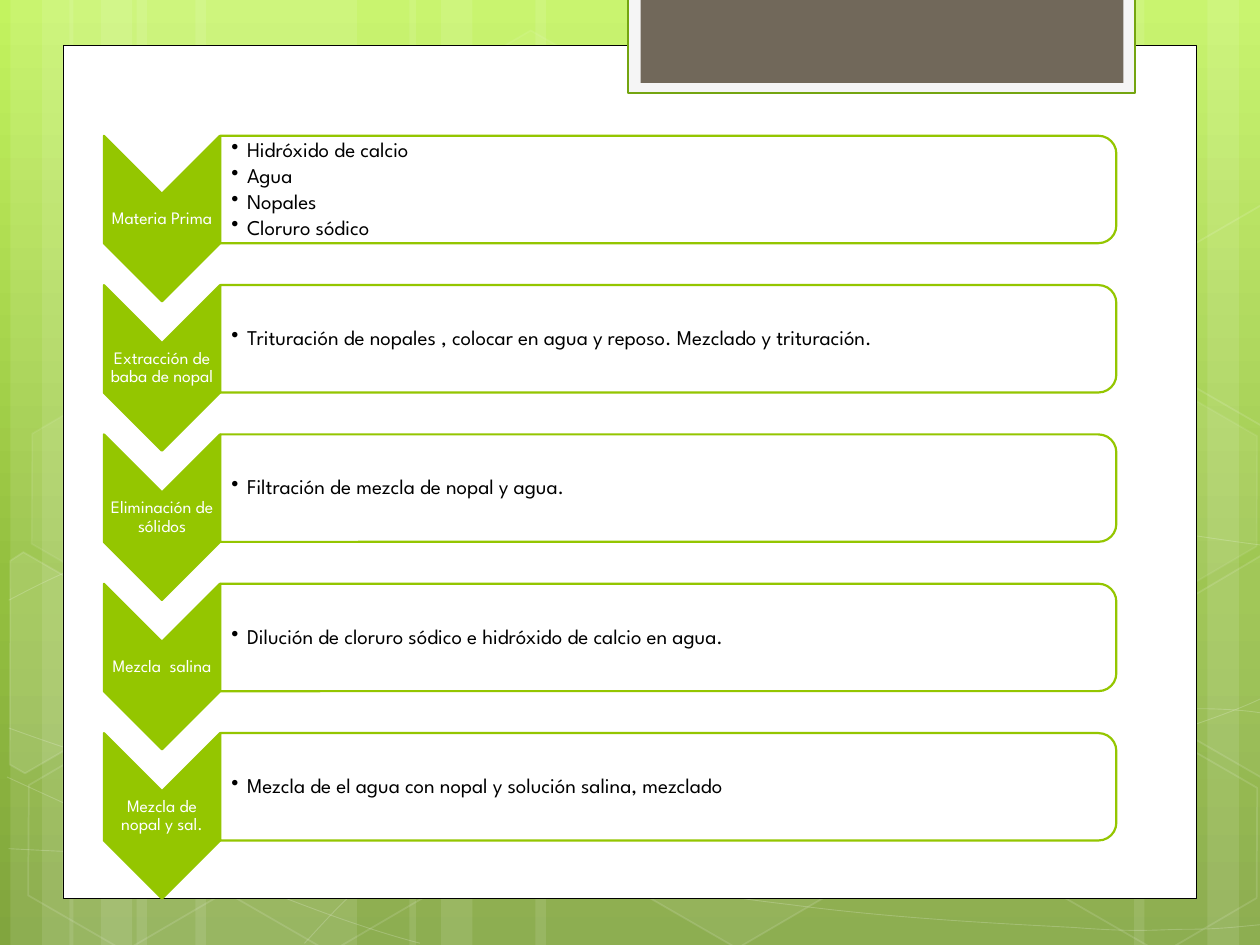
from copy import deepcopy
from dataclasses import dataclass
from math import cos, radians, sin

from lxml.etree import SubElement
from pptx import Presentation
from pptx.dml.color import RGBColor
from pptx.enum.shapes import MSO_SHAPE as Shape
from pptx.enum.text import MSO_ANCHOR as Anchor, PP_ALIGN as Align
from pptx.oxml.ns import qn
from pptx.util import Pt


@dataclass(frozen=True)
class Theme:
    sky: tuple = ((0, "C3F35F"), (0.62, "93BF3F"), (1, "81A53E"))
    white: str = "FFFFFF"
    black: str = "000000"
    green: str = "94C600"
    tab_edge: str = "74A510"
    tab_paper: str = "F5F5F5"
    tab_core: str = "71685A"
    font: str = "League Spartan"
    step_size: float = 10
    detail_size: float = 12


theme = Theme()


def paint(shape, fill=None, line=None, width=1, fill_alpha=100, line_alpha=100):
    """Set fill and outline; alphas are percent opacity, None means no paint."""
    shape.shadow.inherit = False
    shape.line.width = Pt(width)
    for paint_format, color, alpha, parent in (
        (shape.fill, fill, fill_alpha, shape._element.spPr),
        (shape.line.fill, line, line_alpha, shape._element.spPr.find(qn("a:ln"))),
    ):
        if color is None:
            paint_format.background()
            continue
        paint_format.solid()
        paint_format.fore_color.rgb = RGBColor.from_string(color)
        if alpha < 100:
            solid = parent.find(qn("a:solidFill"))
            SubElement(solid[0], qn("a:alpha"), val=str(alpha * 1000))


def write(left, top, width, height, lines, size, color, inset, **paragraph_format):
    box = diagram.add_textbox(Pt(left), Pt(top), Pt(width), Pt(height))
    frame = box.text_frame
    margins = dict(margin_left=inset, margin_top=0.7, margin_right=0.7, margin_bottom=0.7)
    for name, value in margins.items():
        setattr(frame, name, Pt(value))
    frame.word_wrap = True
    frame.vertical_anchor = Anchor.MIDDLE
    frame.text = "\n".join(lines)
    for paragraph in frame.paragraphs:
        for name, value in paragraph_format.items():
            setattr(paragraph, name, value)
        paragraph.line_spacing = 0.9
        for run in paragraph.runs:
            run.font.name = theme.font
            run.font.size = Pt(size)
            run.font.color.rgb = RGBColor.from_string(color)
    return frame


deck = Presentation()
deck.slide_width, deck.slide_height = Pt(720), Pt(540)
slide = deck.slides.add_slide(deck.slide_layouts[6])

# Background gradient
sky = slide.background.fill
sky.gradient()
sky.gradient_angle = 270
stop_list = slide._element.find(".//" + qn("a:gsLst"))
stop_list.append(deepcopy(stop_list[-1]))
for stop, (position, color) in zip(sky.gradient_stops, theme.sky):
    stop.position = position
    stop.color.rgb = RGBColor.from_string(color)

# Light vertical bands
scenery = slide.shapes.add_group_shape().shapes
bands = [(78, 126), (6, 36), (24, 60), (111.6, 126), (39.6, 36), (57.6, 60),
         (528, 126), (690, 36), (648, 60), (306, 222), (234, 36), (252, 60)]
for left, width in bands:
    band = scenery.add_shape(Shape.RECTANGLE, Pt(left), 0, Pt(width), Pt(540))
    paint(band, theme.white, fill_alpha=10)

# Wavy lines: a start, then two handles and an end for each Bézier piece
waves = [
    [(5, 484.6), (43.9, 486.7), (82.8, 488.9), (136.8, 488.2), (190.8, 487.4), (257.8, 486),
     (329.8, 478.8), (401.8, 471.6), (504, 457.9), (570.2, 444.2), (635.8, 430.6),
     (703.4, 409), (725, 396.7)],
    [(5, 343.4), (25.9, 331.9), (46.8, 321.1), (87.1, 310.3), (128.2, 299.5), (186.5, 283.7),
     (249.8, 278.6), (313.9, 273.6), (391.7, 272.9), (470.9, 278.6), (550.1, 284.4),
     (681.8, 306.7), (725, 312.5)],
    [(4.3, 444.2), (91.4, 483.8), (177.8, 523.4), (240.5, 539.3)],
    [(5, 416.2), (27.4, 424.1), (50.4, 432), (92.2, 443.5), (133.9, 454.3), (196.6, 472.3),
     (257, 484.6), (316.8, 496.8), (392.4, 509.8), (452.2, 517), (511.9, 524.9), (576, 527.8),
     (614.2, 529.9), (651.6, 532.8), (661.7, 531.4), (680.4, 531.4), (699.1, 530.6),
     (712.1, 529.2), (725, 528.5)],
    [(174.2, 539.3), (187.2, 524.9), (200.2, 510.5), (217.4, 497.5), (234.7, 484.6),
     (259.2, 470.2), (279.4, 460.1), (299.5, 450), (311.8, 445.7), (338.4, 438.5),
     (364.3, 431.3), (412.6, 421.2), (437.8, 416.2), (463.7, 411.1), (467.3, 411.1),
     (489.6, 409.7), (511.9, 407.5), (547.2, 405.4), (571.7, 404.6), (596.9, 403.9),
     (637.9, 404.6), (637.9, 404.6), (654, 404.6), (670, 404.6), (686.2, 404.6),
     (699.1, 405.4), (711.4, 406.1), (717.8, 406.8), (724.3, 407.5), (722.2, 406.8),
     (724.3, 407.5)],
]
# The straight run in the last wave needs no handles
straight_runs = {(654, 404.6)}
for wave in waves:
    builder = scenery.build_freeform(*wave[0], scale=Pt(1))
    builder.add_line_segments(wave[1:], close=False)
    curve = builder.convert_to_shape()
    outline = curve._element.find(".//" + qn("a:path"))
    segments = outline.findall(qn("a:lnTo"))
    points = wave[1:]
    i = 0
    while i < len(points):
        if i + 1 < len(points) and points[i + 1] in straight_runs:
            # A doubled end point closes the piece before the straight run
            outline.remove(segments[i])
            outline.remove(segments[i + 1])
            outline.remove(segments[i + 2])
            i += 4
            continue
        bezier = SubElement(outline, qn("a:cubicBezTo"))
        segments[i].addprevious(bezier)
        for segment in segments[i:i + 3]:
            bezier.append(segment[0])
            outline.remove(segment)
        i += 3
    paint(curve, line=theme.white, width=0.5, line_alpha=20)

# Hexagons: left, top, fill opacity (0 for none), line opacity
hexagons = [(240.5, 26, 4, 8), (358, 424, 6, 12), (8, 425.5, 0, 12), (10, 224.6, 7, 8),
            (125.3, 426.2, 0, 12), (542.2, 326.2, 10, 12), (600.5, 427, 0, 12),
            (600.5, 226, 7, 8)]
for left, top, fill_alpha, line_alpha in hexagons:
    hexagon = scenery.add_shape(Shape.HEXAGON, Pt(left), Pt(top), Pt(126), Pt(109.4))
    hexagon.rotation = 30
    hexagon.adjustments[0], hexagon.adjustments[1] = 0.285, 1.155
    paint(hexagon, theme.white if fill_alpha else None, theme.white, 1, fill_alpha, line_alpha)

# Hexagons cut by the slide edge: centre, outline as it shows, fill opacity
right_cut = [(666.7, 349.2), (720.7, 317.5), (726.5, 321.1), (726.5, 441.4),
             (721.4, 444.2), (666.7, 412.6)]
cut_hexagons = [
    ((25.9, 385.2),
     [(5.8, 320.4), (13.7, 315.4), (69.1, 347), (68.4, 410.4), (14.4, 442), (5.8, 437)], 10),
    ((709.2, 374.4), right_cut, 4),
    ((709.2, 173.9), [(x, y - 200.5) for x, y in right_cut], 0),
]
c, s = cos(radians(30)), sin(radians(30))
for (cx, cy), corners, fill_alpha in cut_hexagons:
    unturned = [(cx + (x - cx) * c + (y - cy) * s, cy - (x - cx) * s + (y - cy) * c)
                for x, y in corners]
    builder = scenery.build_freeform(*unturned[0], scale=Pt(1))
    builder.add_line_segments(unturned[1:])
    cut_hexagon = builder.convert_to_shape()
    cut_hexagon.rotation = 30
    paint(cut_hexagon, theme.white if fill_alpha else None, theme.white, 1, fill_alpha, 12)

# White page and the tab hanging from the top
panels = [
    ((36, 25.9, 648, 487.4), theme.white, theme.black, 0.5),
    ((359, -1.4, 289.6, 54.7), theme.tab_paper, theme.tab_edge, 1.25),
    ((366.1, -1.4, 275.9, 48.8), theme.tab_core, None, 1),
]
for bounds, fill, line, width in panels:
    paint(slide.shapes.add_shape(Shape.RECTANGLE, *map(Pt, bounds)), fill, line, width)

# Process steps
diagram = slide.shapes.add_group_shape().shapes
steps = [
    ("Materia Prima", ["Hidróxido de calcio", "Agua", "Nopales", "Cloruro sódico"]),
    ("Extracción de baba de nopal",
     ["Trituración de nopales , colocar en agua y reposo. Mezclado y trituración."]),
    ("Eliminación de sólidos", ["Filtración de mezcla de nopal y agua."]),
    ("Mezcla  salina", ["Dilución de cloruro sódico e hidróxido de calcio en agua."]),
    ("Mezcla de nopal y sal.", ["Mezcla de el agua con nopal y solución salina, mezclado"]),
]
FIRST_TOP, PITCH = 77.6, 85.33
for row, (step, details) in enumerate(steps):
    top = FIRST_TOP + row * PITCH
    # Width and height before the quarter turn, and the left edge after it
    for kind, left, width, height, fill, alpha in (
        (Shape.CHEVRON, 59.4, 94.6, 66.3, theme.green, 100),
        (Shape.ROUND_2_SAME_RECTANGLE, 125.9, 61.4, 512, theme.white, 90),
    ):
        shift = (height - width) / 2
        part = diagram.add_shape(kind, Pt(left + shift), Pt(top - shift), Pt(width), Pt(height))
        part.rotation = 90
        paint(part, fill, theme.green, 1.25, fill_alpha=alpha)
        if kind == Shape.CHEVRON:
            write(left, top + 33.2, height, 28.1, [step], theme.step_size, theme.white, 0.7,
                  alignment=Align.CENTER)
    listing = write(125.7, top + 3, 509, 55.4, details, theme.detail_size, theme.black, 6.5,
                    level=1, alignment=Align.LEFT, space_after=Pt(1.8))
    for paragraph in listing.paragraphs:
        properties = paragraph._p.get_or_add_pPr()
        properties.set("marL", str(Pt(9)))
        properties.set("indent", str(Pt(-9)))
        SubElement(properties, qn("a:buChar"), char="••")

deck.save("out.pptx")
